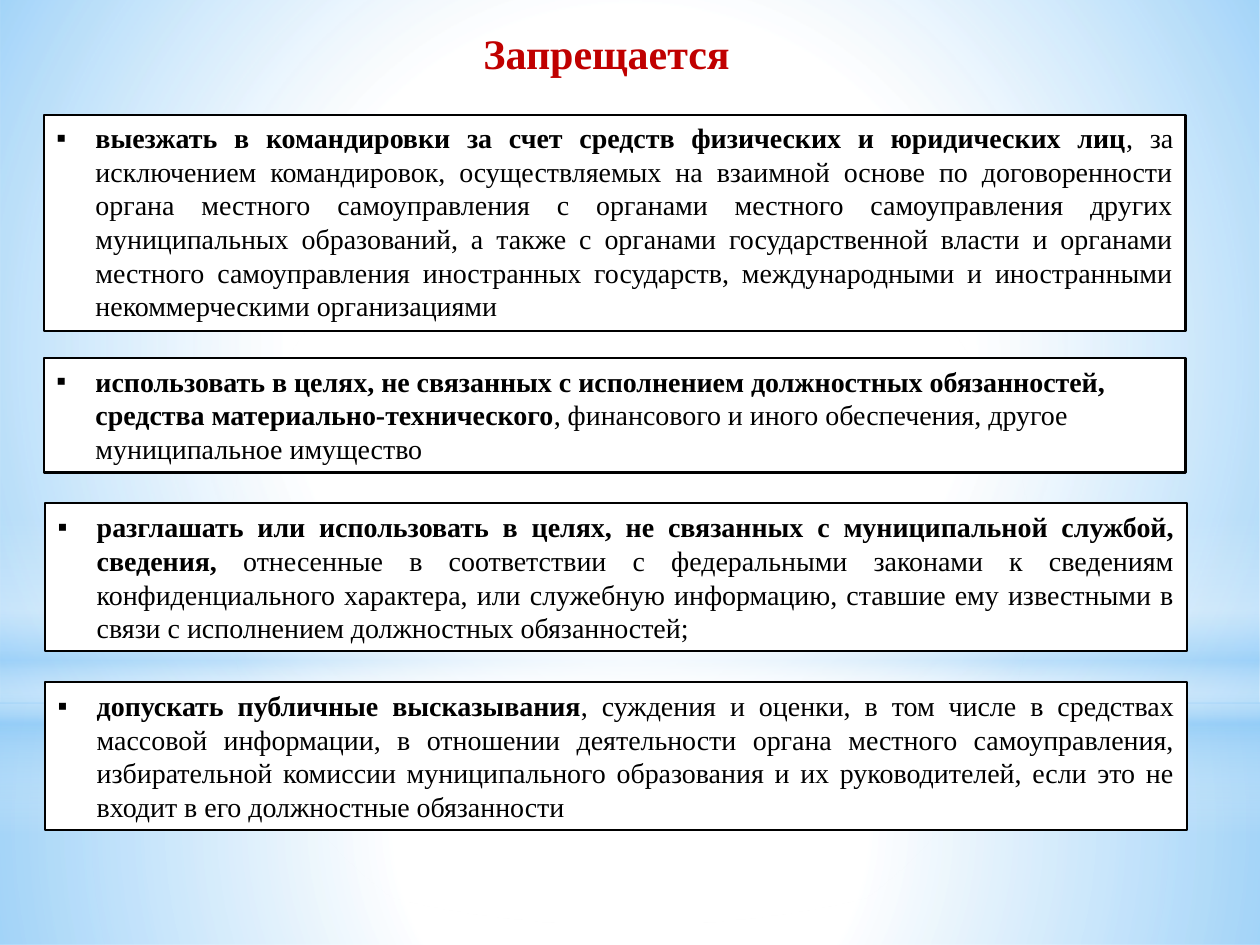
from dataclasses import dataclass

import pptx
import pptx.dml.color
import pptx.enum.shapes
import pptx.enum.text
import pptx.oxml
import pptx.oxml.ns
import pptx.util
from pptx.util import Inches

COLORS = {"white": "FFFFFF", "sky": "8BC9F7", "ink": "000000", "title": "C00000"}
FONT = "Times New Roman"
SHAPES = pptx.enum.shapes.MSO_SHAPE
ALIGN = pptx.enum.text.PP_ALIGN
ANCHOR = pptx.enum.text.MSO_ANCHOR


@dataclass
class Glow:
    top: float
    height: float
    stops: list[tuple[int, str, int]]
    geometry: SHAPES = SHAPES.RECTANGLE
    radial: bool = True


@dataclass
class Ban:
    left: float
    top: float
    height: float
    lead: str
    rest: str
    align: ALIGN = ALIGN.JUSTIFY
    anchor: ANCHOR = ANCHOR.MIDDLE


GLOWS = [
    Glow(5.58, 1.92, [(0, "white", 91), (37, "white", 76), (100, "sky", 79)]),
    Glow(0, 5.58, [(0, "white", 89), (48, "white", 62), (100, "sky", 79)]),
    Glow(4.12, 2.5, [(0, "white", 0), (29, "white", 30), (45, "sky", 40),
                     (55, "white", 26), (65, "sky", 60), (100, "white", 0)], radial=False),
    Glow(1.75, 5.58, [(0, "white", 100), (56, "white", 0)], SHAPES.OVAL),
]

BANS = [
    Ban(0.35, 0.91, 1.72,
        "выезжать в командировки за счет средств физических и юридических лиц",
        ", за исключением командировок, осуществляемых на взаимной основе по договоренности "
        "органа местного самоуправления с органами местного самоуправления других "
        "муниципальных образований, а также с органами государственной власти и органами "
        "местного самоуправления иностранных государств, международными и иностранными "
        "некоммерческими организациями", anchor=ANCHOR.TOP),
    Ban(0.35, 2.84, 0.91,
        "использовать в целях, не связанных с исполнением должностных обязанностей, "
        "средства материально-технического",
        ", финансового и иного обеспечения, другое муниципальное имущество",
        ALIGN.LEFT, ANCHOR.TOP),
    Ban(0.36, 3.99, 1.18,
        "разглашать или использовать в целях, не связанных с муниципальной службой, сведения,",
        " отнесенные в соответствии с федеральными законами к сведениям конфиденциального "
        "характера, или служебную информацию, ставшие ему известными в связи с исполнением "
        "должностных обязанностей;"),
    Ban(0.36, 5.41, 1.18,
        "допускать публичные высказывания",
        ", суждения и оценки, в том числе в средствах массовой информации, в отношении "
        "деятельности органа местного самоуправления, избирательной комиссии муниципального "
        "образования и их руководителей, если это не входит в его должностные обязанности"),
]


def rgb(name: str) -> pptx.dml.color.RGBColor:
    return pptx.dml.color.RGBColor.from_string(COLORS[name])


def style_font(font, size: int, color: str, bold: bool) -> None:
    font.name = FONT
    font.size = pptx.util.Pt(size)
    font.bold = bold
    font.color.rgb = rgb(color)


def draw_glow(slide, glow: Glow) -> None:
    shape = slide.shapes.add_shape(
        glow.geometry, 0, Inches(glow.top), Inches(10), Inches(glow.height))
    shape.shadow.inherit = False
    shape.line.fill.background()
    shape.fill.background()
    stops = "".join(
        f'<a:gs pos="{position * 1000}"><a:srgbClr val="{COLORS[color]}">'
        f'<a:alpha val="{opacity * 1000}"/></a:srgbClr></a:gs>'
        for position, color, opacity in glow.stops)
    direction = (
        '<a:path path="circle"><a:fillToRect l="50000" t="50000" r="50000" b="50000"/></a:path>'
        if glow.radial else '<a:lin ang="5400000" scaled="0"/>')
    gradient = pptx.oxml.parse_xml(
        f'<a:gradFill {pptx.oxml.ns.nsdecls("a")} rotWithShape="1">'
        f'<a:gsLst>{stops}</a:gsLst>{direction}</a:gradFill>')
    properties = shape.element.spPr
    properties.replace(properties.find(pptx.oxml.ns.qn("a:noFill")), gradient)


def add_bullet(paragraph) -> None:
    properties = paragraph._p.get_or_add_pPr()
    properties.set("marL", str(Inches(0.31)))
    properties.set("indent", str(Inches(-0.31)))
    properties.append(pptx.oxml.parse_xml(
        f'<a:buFont {pptx.oxml.ns.nsdecls("a")} typeface="{FONT}"/>'))
    properties.append(pptx.oxml.parse_xml(
        f'<a:buChar {pptx.oxml.ns.nsdecls("a")} char="▪"/>'))


def draw_ban(slide, ban: Ban) -> None:
    box = slide.shapes.add_shape(
        SHAPES.RECTANGLE, Inches(ban.left), Inches(ban.top), Inches(9.06), Inches(ban.height))
    box.shadow.inherit = False
    box.fill.solid()
    box.fill.fore_color.rgb = rgb("white")
    box.line.color.rgb = rgb("ink")
    box.line.width = pptx.util.Pt(1.25)
    frame = box.text_frame
    frame.word_wrap = True
    frame.vertical_anchor = ban.anchor
    paragraph = frame.paragraphs[0]
    paragraph.text = ban.lead
    paragraph.add_run().text = ban.rest
    paragraph.alignment = ban.align
    add_bullet(paragraph)
    for run, bold in zip(paragraph.runs, (True, False)):
        style_font(run.font, 16, "ink", bold)


def draw_title(slide) -> None:
    title = slide.shapes.add_textbox(Inches(3.58), Inches(0.17), Inches(2.47), Inches(0.5))
    frame = title.text_frame
    frame.word_wrap = True
    frame.text = "Запрещается"
    frame.paragraphs[0].alignment = ALIGN.CENTER
    style_font(frame.paragraphs[0].runs[0].font, 24, "title", True)


def main() -> None:
    presentation = pptx.Presentation()
    presentation.slide_width = Inches(10)
    presentation.slide_height = Inches(7.5)
    slide = presentation.slides.add_slide(presentation.slide_layouts[6])
    for glow in GLOWS:
        draw_glow(slide, glow)
    draw_title(slide)
    for ban in BANS:
        draw_ban(slide, ban)
    presentation.save("out.pptx")


if __name__ == "__main__":
    main()
